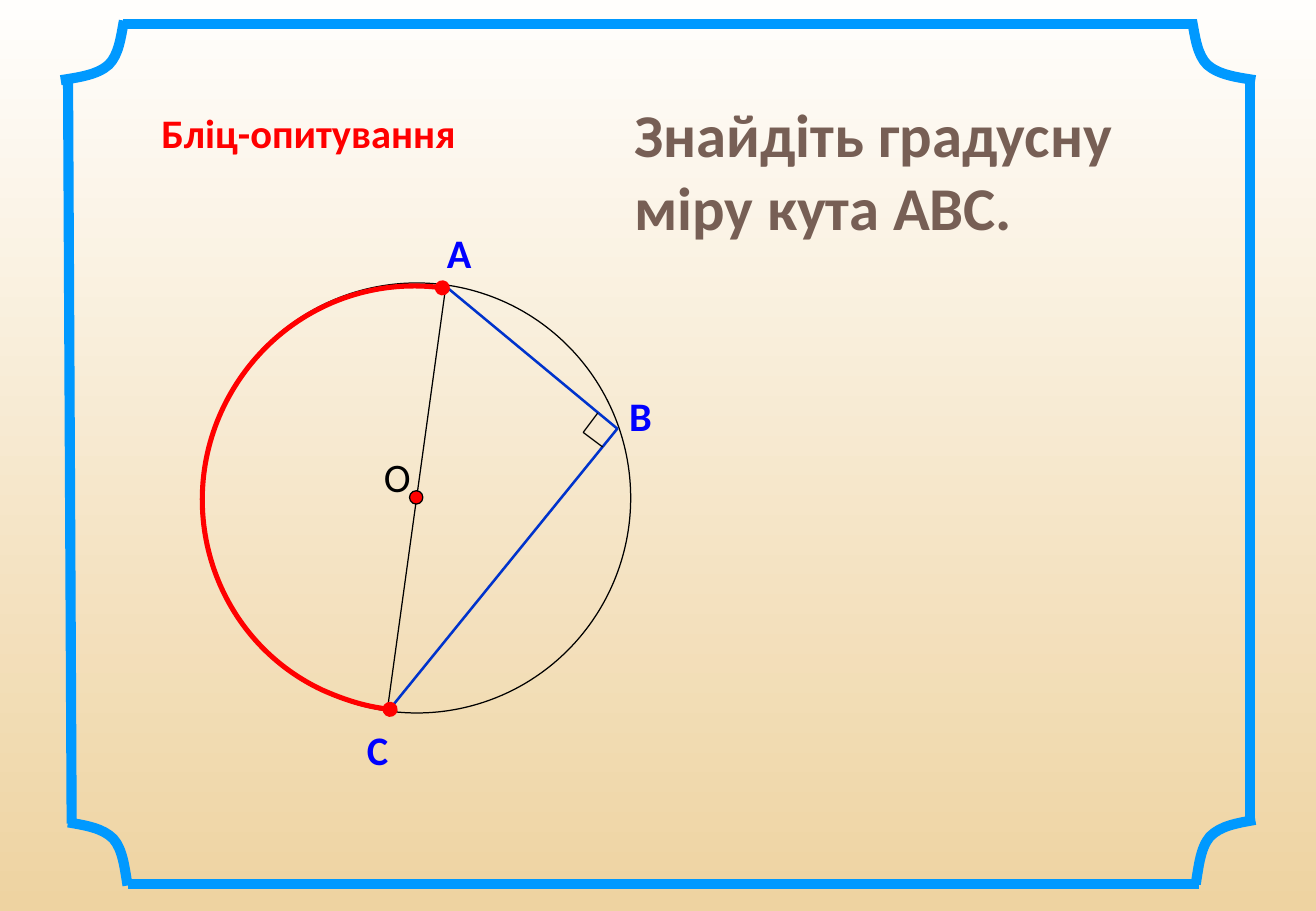
import pptx
import pptx.dml.color
import pptx.enum.shapes
import pptx.enum.text
import pptx.oxml
import pptx.oxml.ns
import pptx.util
from dataclasses import dataclass

Inches = pptx.util.Inches
Pt = pptx.util.Pt
qn = pptx.oxml.ns.qn


@dataclass(frozen=True)
class Theme:
    font: str = "Calibri"
    top: str = "FFFEFC"
    base: str = "EED3A1"
    frame: str = "0099FF"
    title: str = "775F55"
    red: str = "FF0000"
    ink: str = "000000"
    label: str = "0000FF"
    chord: str = "0033CC"
    big: int = 36
    text: int = 24
    thin: float = 0.75
    mid: float = 1.5
    bold: float = 3
    wide: float = 6


THEME = Theme()

# Corner curve in a unit square: two cubic pieces that share the middle point
CURVE = [(0, 0), (0.3, 0.05), (0.58, 0.09), (0.76, 0.26),
         (0.92, 0.43), (0.95, 0.72), (1, 1)]

# Arc from C to A: three cubic pieces
ARC = [(3.21, 5.84), (3.02, 5.82), (2.83, 5.76), (2.65, 5.68),
       (1.78, 5.27), (1.42, 4.22), (1.84, 3.35),
       (2.17, 2.67), (2.9, 2.27), (3.64, 2.37)]


def rgb(code):
    return pptx.dml.color.RGBColor.from_string(code)


def stroke(line, color, width):
    line.color.rgb = rgb(color)
    line.width = Pt(width)


def style(frame, text, size, color, bold=True):
    frame.text = text
    frame.vertical_anchor = pptx.enum.text.MSO_ANCHOR.TOP
    part = frame.paragraphs[0]
    part.alignment = pptx.enum.text.PP_ALIGN.LEFT
    font = part.font
    font.name = THEME.font
    font.size = Pt(size)
    font.bold = bold
    font.color.rgb = rgb(color)


def add_text(slide, box, text, color, bold=True, wrap=True):
    shape = slide.shapes.add_textbox(*map(Inches, box))
    shape.text_frame.word_wrap = wrap
    style(shape.text_frame, text, THEME.text, color, bold)


def add_line(slide, start, end, color, width):
    line = slide.shapes.add_connector(
        pptx.enum.shapes.MSO_CONNECTOR.STRAIGHT, *map(Inches, start + end))
    stroke(line.line, color, width)
    line._element.spPr.append(pptx.oxml.parse_xml(
        f"<a:effectLst {pptx.oxml.ns.nsdecls('a')}/>"))


def add_trace(slide, points, color, width):
    dots = [(Inches(x), Inches(y)) for x, y in points]
    maker = slide.shapes.build_freeform(*dots[0])
    maker.add_line_segments(dots[1:], close=False)
    shape = maker.convert_to_shape()
    shape.shadow.inherit = False
    shape.fill.background()
    stroke(shape.line, color, width)
    return shape


def add_curve(slide, points, color, width):
    shape = add_trace(slide, points, color, width)
    # Each three segments become one cubic piece
    legs = list(shape._element.iter(qn("a:lnTo")))
    for first, second, third in zip(legs[::3], legs[1::3], legs[2::3]):
        first.tag = qn("a:cubicBezTo")
        for leg in (second, third):
            first.append(leg[0])
            leg.getparent().remove(leg)
    return shape


def add_ring(slide, box, fill=None):
    ring = slide.shapes.add_shape(
        pptx.enum.shapes.MSO_SHAPE.OVAL, *map(Inches, box))
    ring.shadow.inherit = False
    if fill:
        ring.fill.solid()
        ring.fill.fore_color.rgb = rgb(fill)
    else:
        ring.fill.background()
    stroke(ring.line, THEME.ink, THEME.thin)


def add_corner(slide, x, y, dx, dy):
    points = [(x + u * dx, y + v * dy) for u, v in CURVE]
    add_curve(slide, points, THEME.frame, THEME.wide)


def add_arc(slide):
    arc = add_curve(slide, ARC, THEME.red, THEME.bold)
    line = arc.line._get_or_add_ln()
    for end in ("headEnd", "tailEnd"):
        line.append(pptx.oxml.parse_xml(
            f"<a:{end} {pptx.oxml.ns.nsdecls('a')} type='oval'/>"))


def add_back(slide):
    fill = slide.background.fill
    fill.gradient()
    fill.gradient_angle = 270
    for stop, color in zip(fill.gradient_stops, (THEME.top, THEME.base)):
        stop.color.rgb = rgb(color)


def add_frame(slide):
    for start, end in (((1.01, 0.2), (9.85, 0.2)),
                       ((1.05, 7.28), (9.87, 7.28)),
                       ((10.29, 0.66), (10.29, 6.78)),
                       ((0.56, 0.66), (0.59, 6.78))):
        add_line(slide, start, end, THEME.frame, THEME.wide)
    for corner in ((0.56, 6.77, 0.49, 0.52), (10.33, 6.75, -0.49, 0.53),
                   (10.33, 0.66, -0.52, -0.49), (0.5, 0.66, 0.52, -0.49)):
        add_corner(slide, *corner)


def add_title(slide):
    title = slide.shapes.title
    title.left, title.top, title.width, title.height = map(
        Inches, (5.12, 0.75, 4.96, 1.31))
    style(title.text_frame, "Знайдіть градусну міру кута АВС.",
          THEME.big, THEME.title)
    title.text_frame.auto_size = pptx.enum.text.MSO_AUTO_SIZE.NONE


def add_figure(slide):
    # Circle, diameter and centre
    add_line(slide, (3.67, 2.35), (3.19, 5.83), THEME.ink, THEME.thin)
    add_text(slide, (3.06, 3.67, 0.42, 0.5), "О", THEME.ink,
             bold=False, wrap=False)
    add_ring(slide, (1.67, 2.33, 3.52, 3.54))
    add_ring(slide, (3.37, 4.04, 0.11, 0.11), THEME.red)
    # Inscribed angle, its arc and the right-angle mark
    add_trace(slide, [(3.67, 2.36), (5.08, 3.53), (3.19, 5.86)],
              THEME.chord, THEME.mid)
    add_arc(slide)
    add_trace(slide, [(4.96, 3.68), (4.8, 3.56), (4.92, 3.4)],
              THEME.ink, THEME.thin)
    # Point names
    for name, x, y in (("А", 3.58, 1.83), ("В", 5.08, 3.17),
                       ("С", 2.92, 5.92)):
        add_text(slide, (x, y, 0.55, 0.5), name, THEME.label)


def main():
    deck = pptx.Presentation()
    deck.slide_width = Inches(10.83)
    deck.slide_height = Inches(7.5)
    slide = deck.slides.add_slide(deck.slide_layouts[5])
    add_back(slide)
    add_frame(slide)
    add_title(slide)
    add_figure(slide)
    add_text(slide, (1.23, 0.84, 3.08, 0.5), "Бліц-опитування", THEME.red)
    deck.save("out.pptx")


if __name__ == "__main__":
    main()
